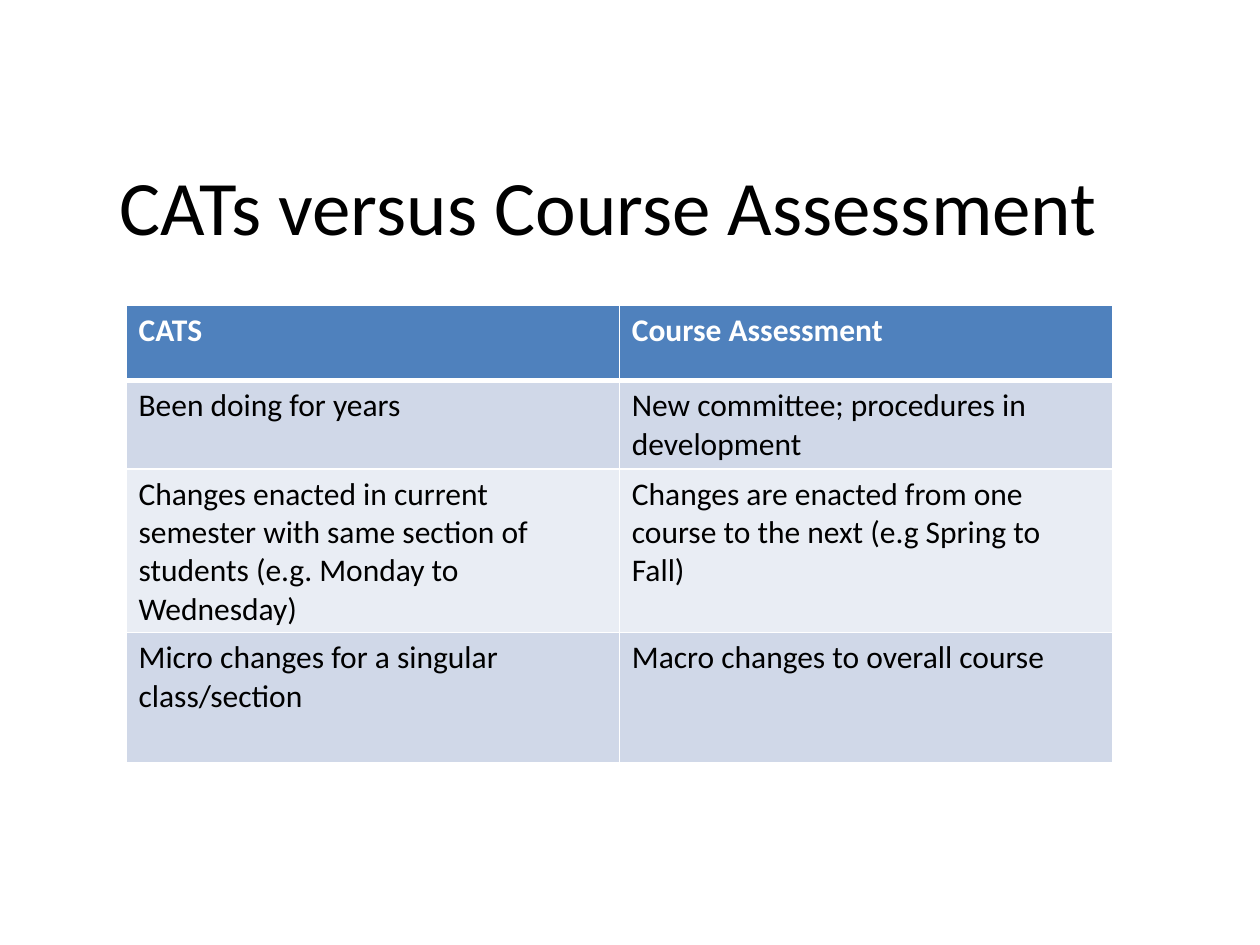
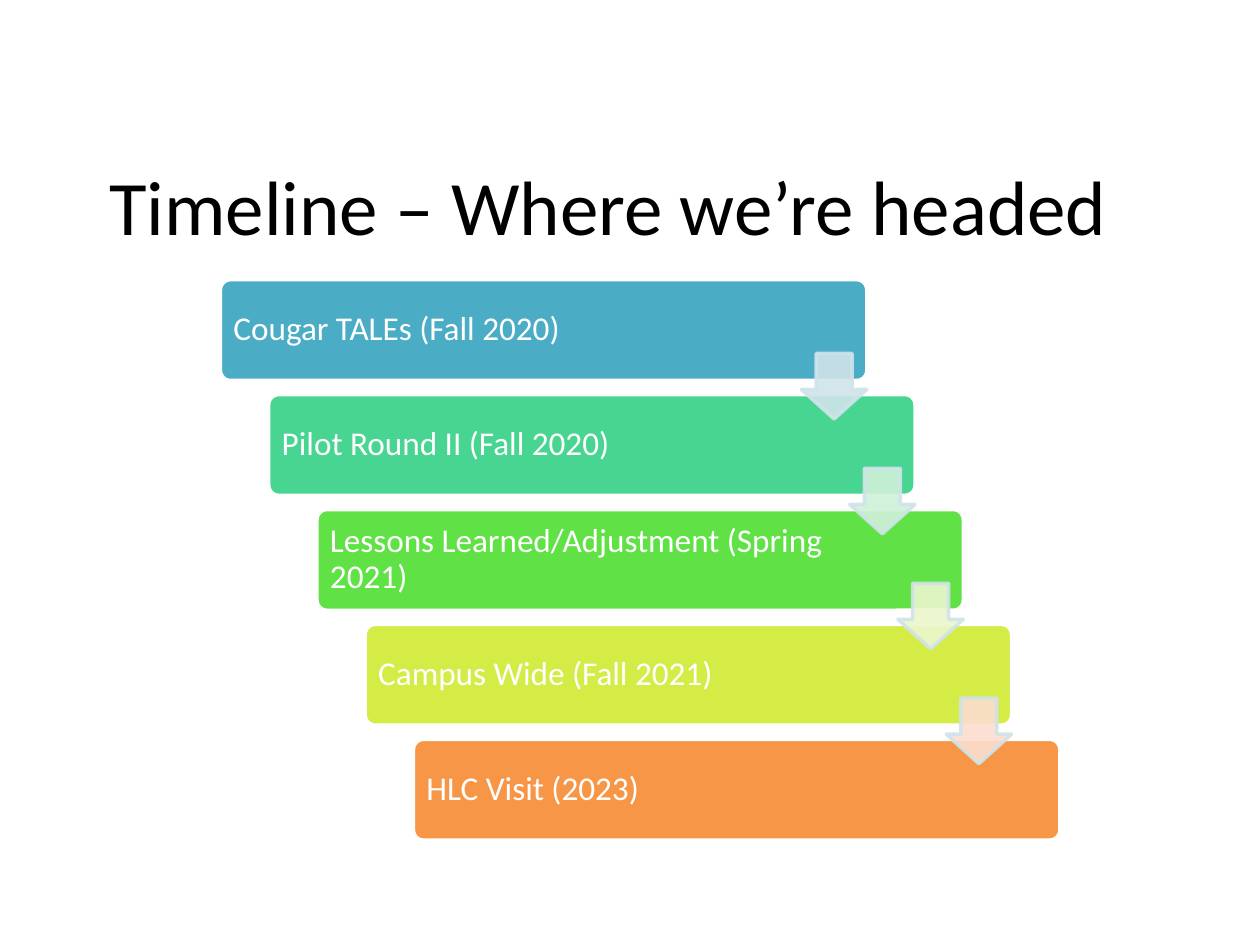
from dataclasses import dataclass

from lxml.etree import SubElement
from pptx import Presentation
from pptx.dml.color import RGBColor
from pptx.enum.shapes import MSO_SHAPE
from pptx.enum.text import MSO_ANCHOR, PP_ALIGN
from pptx.oxml import parse_xml
from pptx.oxml.ns import nsdecls, qn
from pptx.util import Inches, Pt

COLUMNS, ROWS = 100, 75


@dataclass(frozen=True)
class Theme:
    font: str = "Calibri"
    dark: str = "000000"
    light: str = "FFFFFF"
    header: str = "4F81BD"
    bands: tuple = ("D0D8E8", "E9EDF4")
    arrow_line: str = "D0E3EA"
    arrow_opacity: int = 90
    title_size: int = 44
    table_size: int = 18
    step_size: int = 19
    thin: int = 1
    thick: int = 3
    outline: int = 2


def apply(target, values):
    for name, value in values.items():
        setattr(target, name, value)


class SlideBuilder:
    """Draws on the current page; lengths are grid columns and rows."""

    def __init__(self, theme):
        self.theme = theme
        self.deck = Presentation()
        apply(self.deck, {"slide_width": Inches(10), "slide_height": Inches(7.5)})
        self.page = None

    def place(self, left, top, width, height):
        column = self.deck.slide_width / COLUMNS
        row = self.deck.slide_height / ROWS
        return [round(length * unit) for length, unit in
                ((left, column), (top, row), (width, column), (height, row))]

    def add_text(self, frame, text, size, color, bold=False, **paragraph_format):
        para = frame.paragraphs[0]
        apply(para, paragraph_format)
        span = para.add_run()
        span.text = text
        apply(span.font, {"name": self.theme.font, "size": Pt(size), "bold": bold})
        span.font.color.rgb = RGBColor.from_string(color)

    def new_page(self, title):
        self.page = self.deck.slides.add_slide(self.deck.slide_layouts[6])
        box = self.page.shapes.add_textbox(*self.place(3.3, 10, 90, 12.5))
        apply(box.text_frame, {"word_wrap": True, "vertical_anchor": MSO_ANCHOR.MIDDLE})
        self.add_text(box.text_frame, title, self.theme.title_size, self.theme.dark,
                      alignment=PP_ALIGN.CENTER)

    def shape(self, kind, area, fill, line, adjustments, opacity=100):
        shape = self.page.shapes.add_shape(kind, *self.place(*area))
        shape.shadow.inherit = False
        for index, value in enumerate(adjustments):
            shape.adjustments[index] = value
        shape.line.width = Pt(self.theme.outline)
        for paint, color in ((shape.fill, fill), (shape.line.fill, line)):
            paint.solid()
            paint.fore_color.rgb = RGBColor.from_string(color)
        if opacity < 100:
            for tint in shape._element.spPr.iter(qn("a:srgbClr")):
                SubElement(tint, qn("a:alpha"), val=str(opacity * 1000))
        return shape

    def step(self, area, text, fill):
        bar = self.shape(MSO_SHAPE.ROUNDED_RECTANGLE, area, fill, self.theme.light, [0.1])
        inset = Inches(0.08)
        apply(bar.text_frame, {
            "word_wrap": True, "vertical_anchor": MSO_ANCHOR.MIDDLE,
            "margin_left": inset, "margin_top": inset, "margin_bottom": inset,
            "margin_right": Inches(0.99)})
        self.add_text(bar.text_frame, text, self.theme.step_size, self.theme.light,
                      alignment=PP_ALIGN.LEFT, line_spacing=0.9)

    def arrow(self, area, fill):
        self.shape(MSO_SHAPE.DOWN_ARROW, area, fill, self.theme.arrow_line,
                   [0.55, 0.45], self.theme.arrow_opacity)

    def border(self, cell, top, bottom):
        thin = self.theme.thin
        widths = {"lnL": thin, "lnR": thin, "lnT": top, "lnB": bottom}
        for index, (side, width) in enumerate(widths.items()):
            cell._tc.get_or_add_tcPr().insert(index, parse_xml(
                f'<a:{side} {nsdecls("a")} w="{Pt(width)}"><a:solidFill>'
                f'<a:srgbClr val="{self.theme.light}"/></a:solidFill></a:{side}>'))

    def table(self, area, records, row_heights):
        theme = self.theme
        grid = self.page.shapes.add_table(
            len(records), len(records[0]), *self.place(*area)).table
        for row, (record, height) in enumerate(zip(records, row_heights)):
            grid.rows[row].height = self.place(0, 0, 0, height)[3]
            head = row == 0
            fill = theme.header if head else theme.bands[(row - 1) % 2]
            for column, text in enumerate(record):
                cell = grid.cell(row, column)
                cell.fill.solid()
                cell.fill.fore_color.rgb = RGBColor.from_string(fill)
                self.border(cell, top=theme.thick if row == 1 else theme.thin,
                            bottom=theme.thick if head else theme.thin)
                self.add_text(cell.text_frame, text, theme.table_size,
                              theme.light if head else theme.dark, bold=head)


def comparison_page(builder):
    builder.new_page("CATs versus Course Assessment")
    records = [
        ("CATS", "Course Assessment"),
        ("Been doing for years", "New committee; procedures in development"),
        ("Changes enacted in current semester with same section of students "
         "(e.g. Monday to Wednesday)",
         "Changes are enacted from one course to the next (e.g Spring to Fall)"),
        ("Micro changes for a singular class/section",
         "Macro changes to overall course"),
    ]
    builder.table((10, 24.2, 78.3, 28.3), records, (6, 6, 6, 10.3))


def timeline_page(builder):
    builder.new_page("Timeline – Where we’re headed")
    steps = [
        ("Cougar TALEs (Fall 2020)", "4BACC6"),
        ("Pilot Round II (Fall 2020)", "48D491"),
        ("Lessons Learned/Adjustment (Spring 2021)", "60E146"),
        ("Campus Wide (Fall 2021)", "D5EC46"),
        ("HLC Visit (2023)", "F79646"),
    ]
    arrow_fills = ("D0E3EA", "CFF1D9", "EBF7CE", "FCDDCF")
    left, top, width, height = 17.5, 22.2, 51.3, 8
    shift, drop = 3.83, 9.12
    arrow_size, arrow_drop = 5.2, 5.85
    for index, (text, fill) in enumerate(steps):
        builder.step((left + index * shift, top + index * drop, width, height), text, fill)
    for index, fill in enumerate(arrow_fills):
        builder.arrow((left + index * shift + width - arrow_size,
                       top + index * drop + arrow_drop, arrow_size, arrow_size), fill)


def main():
    builder = SlideBuilder(Theme())
    comparison_page(builder)
    timeline_page(builder)
    builder.deck.save("out.pptx")


if __name__ == "__main__":
    main()
